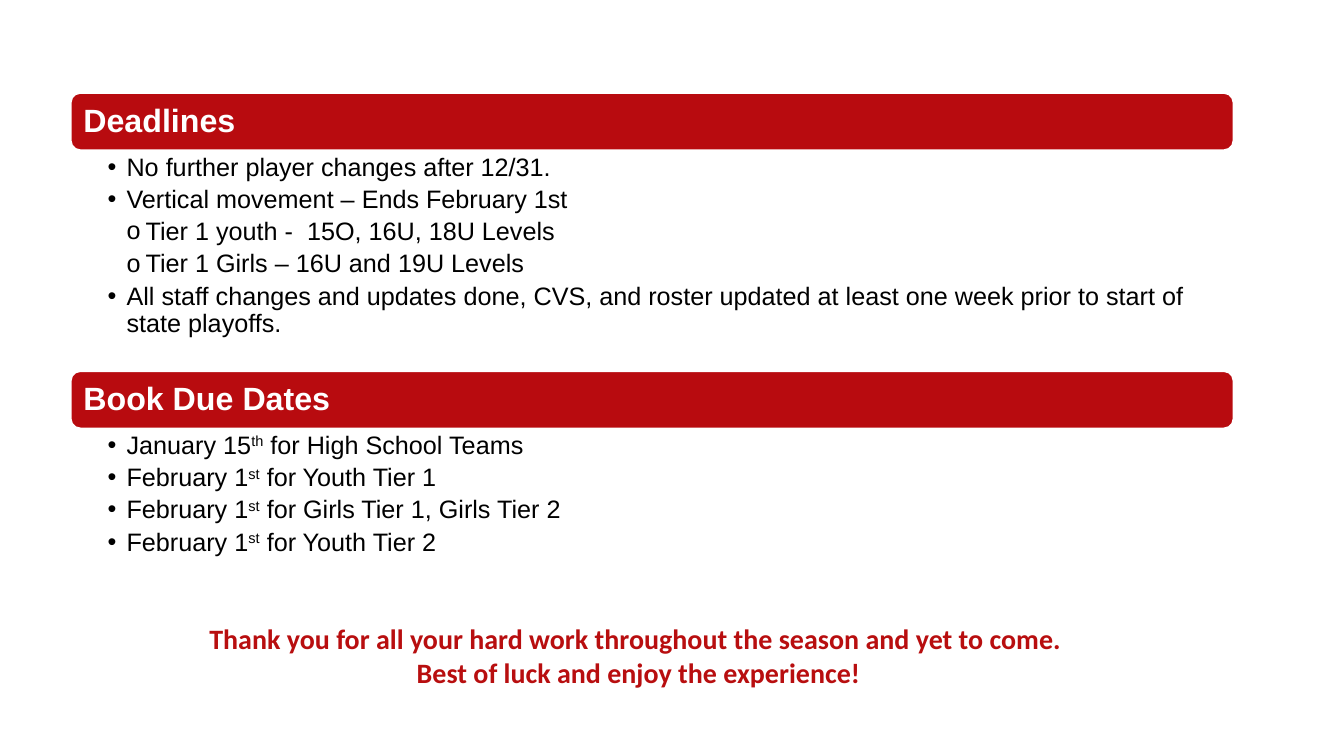
from lxml import etree
from pptx import Presentation
from pptx.dml.color import RGBColor
from pptx.enum.shapes import MSO_SHAPE
from pptx.enum.text import MSO_ANCHOR, MSO_AUTO_SIZE, PP_ALIGN
from pptx.oxml.ns import qn
from pptx.util import Cm, Pt

ROUND = MSO_SHAPE.ROUNDED_RECTANGLE
TOP, MIDDLE = MSO_ANCHOR.TOP, MSO_ANCHOR.MIDDLE
LEFT, CENTER = PP_ALIGN.LEFT, PP_ALIGN.CENTER
NO_FIT = MSO_AUTO_SIZE.NONE

COLORS = {"bar": "B80B0F", "thanks": "B80E0F", "white": "FFFFFF", "black": "000000"}
BAR_X, BAR_W, BAR_H = 1.78, 29.31, 1.45
STEP = 0.48  # bullet indent per level
MARKS = ("•", "o")

# Each section: heading, top, list height, (level, text) items; ^ encloses superscript
SECTIONS = (
    ("Deadlines", 2.34, 5.56, (
        (0, "No further player changes after 12/31."),
        (0, "Vertical movement – Ends February 1st"),
        (1, "Tier 1 youth -  15O, 16U, 18U Levels"),
        (1, "Tier 1 Girls – 16U and 19U Levels"),
        (0, "All staff changes and updates done, CVS, and roster updated "
            "at least one week prior to start of state playoffs."),
    )),
    ("Book Due Dates", 9.35, 3.25, (
        (0, "January 15^th^ for High School Teams"),
        (0, "February 1^st^ for Youth Tier 1"),
        (0, "February 1^st^ for Girls Tier 1, Girls Tier 2"),
        (0, "February 1^st^ for Youth Tier 2"),
    )),
)
THANKS = (
    "Thank you for all your hard work throughout the season and yet to come. ",
    "Best of luck and enjoy the experience!",
)


def rgb(name):
    return RGBColor.from_string(COLORS[name])


def place(shape, x, y, w, h):
    shape.left, shape.top, shape.width, shape.height = Cm(x), Cm(y), Cm(w), Cm(h)


def set_frame(frame, insets, anchor=TOP):
    """Set wrapping, anchor and left, top, right, bottom insets in cm."""
    frame.word_wrap = True
    frame.auto_size = NO_FIT
    frame.vertical_anchor = anchor
    (frame.margin_left, frame.margin_top,
     frame.margin_right, frame.margin_bottom) = map(Cm, insets)


def set_bullet(para, level):
    """Give a hanging bullet, or none when level is None."""
    props = para._p.get_or_add_pPr()
    if level is None:
        props.set("marL", "0")
        props.set("indent", "0")
        etree.SubElement(props, qn("a:buNone"))
        return
    para.level = level
    props.set("marL", str(Cm(STEP * (level + 1))))
    props.set("indent", str(-Cm(STEP)))
    color = etree.SubElement(props, qn("a:buClr"))
    etree.SubElement(color, qn("a:srgbClr"), val=COLORS["black"])
    etree.SubElement(props, qn("a:buFont"), typeface="Arial")
    etree.SubElement(props, qn("a:buChar"), char=MARKS[level])


def write(frame, text, *, size, color, font="Arial", bold=False, align=LEFT,
          level=None, spacing=0.9, before=0):
    """Add a paragraph, using the empty first one if it is still free."""
    para = frame.paragraphs[0] if not frame.text else frame.add_paragraph()
    para.alignment = align
    para.line_spacing = spacing
    para.space_before = Pt(before)
    set_bullet(para, level)
    for i, part in enumerate(text.split("^")):
        run = para.add_run()
        run.text = part
        run.font.name, run.font.size, run.font.bold = font, Pt(size), bold
        run.font.color.rgb = rgb(color)
        if i % 2:
            run._r.get_or_add_rPr().set("baseline", "30000")


def add_bar(slide, top):
    bar = slide.shapes.add_shape(ROUND, Cm(BAR_X), Cm(top), Cm(BAR_W), Cm(BAR_H))
    bar.shadow.inherit = False
    bar.fill.solid()
    bar.fill.fore_color.rgb = rgb("bar")
    bar.line.color.rgb = rgb("white")
    bar.line.width = Pt(1.5)


def fill_head(slide, head, text, top):
    place(head, BAR_X + 0.07, top + 0.07, BAR_W - 0.14, BAR_H - 0.14)
    slide.shapes._spTree.append(head._element)  # in front of its bar
    set_frame(head.text_frame, (0.25, 0.25, 0.25, 0.25), MIDDLE)
    write(head.text_frame, text, size=23, color="white", bold=True)


def fill_list(body, items, top, height):
    place(body, BAR_X, top, BAR_W, height)
    set_frame(body.text_frame, (0.93, 0.08, 0.45, 0.08))
    for i, (level, text) in enumerate(items):
        write(body.text_frame, text, size=18, color="black", level=level,
              before=3.6 if i else 0)


def add_thanks(slide):
    box = slide.shapes.add_textbox(Cm(4.83), Cm(15.54), Cm(22.53), Cm(2.74))
    set_frame(box.text_frame, (0.25, 0.13, 0.25, 0.13))
    for line in THANKS:
        write(box.text_frame, line, size=20, color="thanks", font="Calibri",
              bold=True, align=CENTER, spacing=1.0)


def main():
    deck = Presentation()
    deck.slide_width, deck.slide_height = Cm(33.87), Cm(19.05)
    slide = deck.slides.add_slide(deck.slide_layouts[4])  # two headings, two lists
    title, *holders = slide.placeholders
    title._element.getparent().remove(title._element)
    add_thanks(slide)
    for head, body, (text, top, height, items) in zip(holders[::2], holders[1::2], SECTIONS):
        add_bar(slide, top)
        fill_head(slide, head, text, top)
        fill_list(body, items, top + BAR_H + 0.02, height)
    deck.save("out.pptx")


if __name__ == "__main__":
    main()
